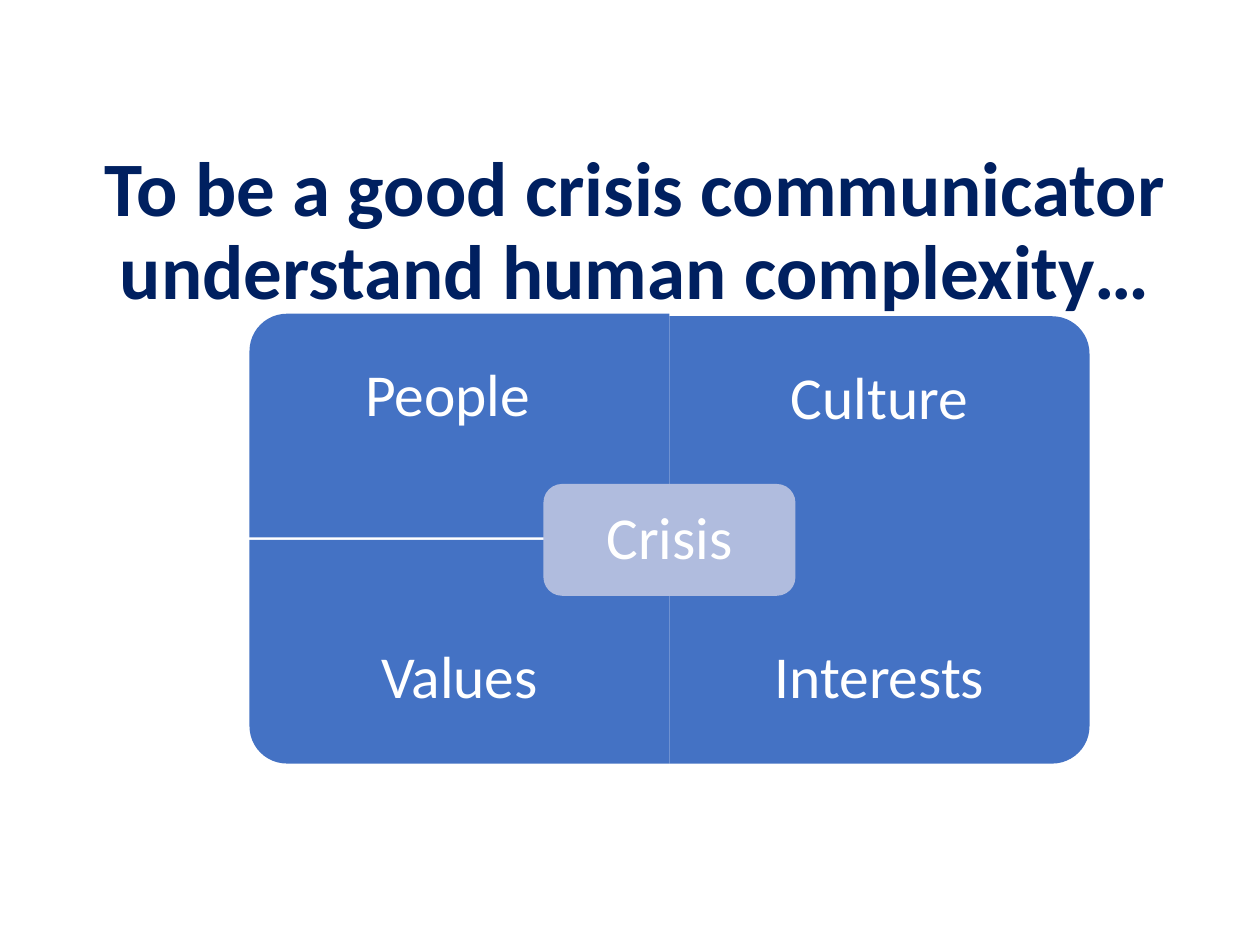
from pptx import Presentation
from pptx import util as u
from pptx.dml.color import RGBColor
from pptx.enum import shapes, text

COLORS = {"navy": "002060", "blue": "4472C4", "pale": "B0BCDE", "white": "FFFFFF"}
FONT = "Calibri"
WIDTH, HEIGHT = 10, 7.5


def write(frame, words, size=34, color="white", bold=False, inset=None, after=0,
          anchor=text.MSO_ANCHOR.MIDDLE):
    """Fill a text frame with one centred, formatted paragraph."""
    frame.word_wrap = True
    frame.auto_size = text.MSO_AUTO_SIZE.NONE
    frame.vertical_anchor = anchor
    if inset is not None:
        frame.margin_left = frame.margin_right = u.Inches(inset)
        frame.margin_top = frame.margin_bottom = u.Inches(inset)
    line = frame.paragraphs[0]
    line.alignment = text.PP_ALIGN.CENTER
    line.line_spacing = 0.9
    line.space_before = u.Pt(0)
    line.space_after = u.Pt(after)
    run = line.add_run()
    run.text = words
    run.font.name = FONT
    run.font.size = u.Pt(size)
    run.font.bold = bold
    run.font.color.rgb = RGBColor.from_string(COLORS[color])


def add_panel(slide, kind, box, color, rotation=0):
    """Add a plain filled shape that covers the box after its quarter turns."""
    left, top, width, height = box
    if rotation % 180:
        left, top = left + (width - height) / 2, top + (height - width) / 2
        width, height = height, width
    panel = slide.shapes.add_shape(kind, *map(u.Inches, (left, top, width, height)))
    panel.rotation = rotation
    panel.shadow.inherit = False
    panel.fill.solid()
    panel.fill.fore_color.rgb = RGBColor.from_string(COLORS[color])
    panel.line.fill.background()


def add_label(slide, words, box, inset):
    """Add a centred label in the box."""
    label = slide.shapes.add_textbox(*map(u.Inches, box))
    write(label.text_frame, words, inset=inset)


def add_title(slide, words, box):
    """Place and format the slide title."""
    title = slide.shapes.title
    title.left, title.top, title.width, title.height = map(u.Inches, box)
    write(title.text_frame, words, size=44, color="navy", bold=True,
          anchor=text.MSO_ANCHOR.TOP)


def add_matrix(slide, quadrants, core, box):
    """Draw four outward-rounded quadrants around a central core."""
    left, top, width, height = box
    cell_w, cell_h = width / 2, height / 2
    label_h = cell_h * 0.75
    for index, (words, rotation, lift) in enumerate(quadrants):
        row, column = divmod(index, 2)
        x, y = left + column * cell_w, top + row * cell_h - lift
        add_panel(slide, shapes.MSO_SHAPE.ROUND_1_RECTANGLE,
                  (x, y, cell_w, cell_h), "blue", rotation)
        label_y = y + row * (cell_h - label_h)
        add_label(slide, words, (x, label_y, cell_w, label_h), 0.26)
    core_w, core_h = cell_w * 0.6, cell_h / 2
    core_box = (left + cell_w - core_w / 2, top + cell_h - core_h / 2, core_w, core_h)
    add_panel(slide, shapes.MSO_SHAPE.ROUNDED_RECTANGLE, core_box, "pale")
    add_label(slide, core, core_box, 0.18)


def main():
    """Build and save the slide."""
    deck = Presentation()
    deck.slide_width, deck.slide_height = u.Inches(WIDTH), u.Inches(HEIGHT)
    slide = deck.slides.add_slide(deck.slide_layouts[5])
    add_title(slide, "To be a good crisis communicator understand human complexity…",
              (0.65, 1.14, 8.79, 1.57))
    quadrants = [("People\t", 270, 0.02), ("Culture", 0, 0),
                 ("Values", 180, 0), ("Interests", 90, 0)]
    add_matrix(slide, quadrants, "Crisis", (1.98, 2.51, WIDTH * 2 / 3, 3.55))
    deck.save("out.pptx")


if __name__ == "__main__":
    main()
